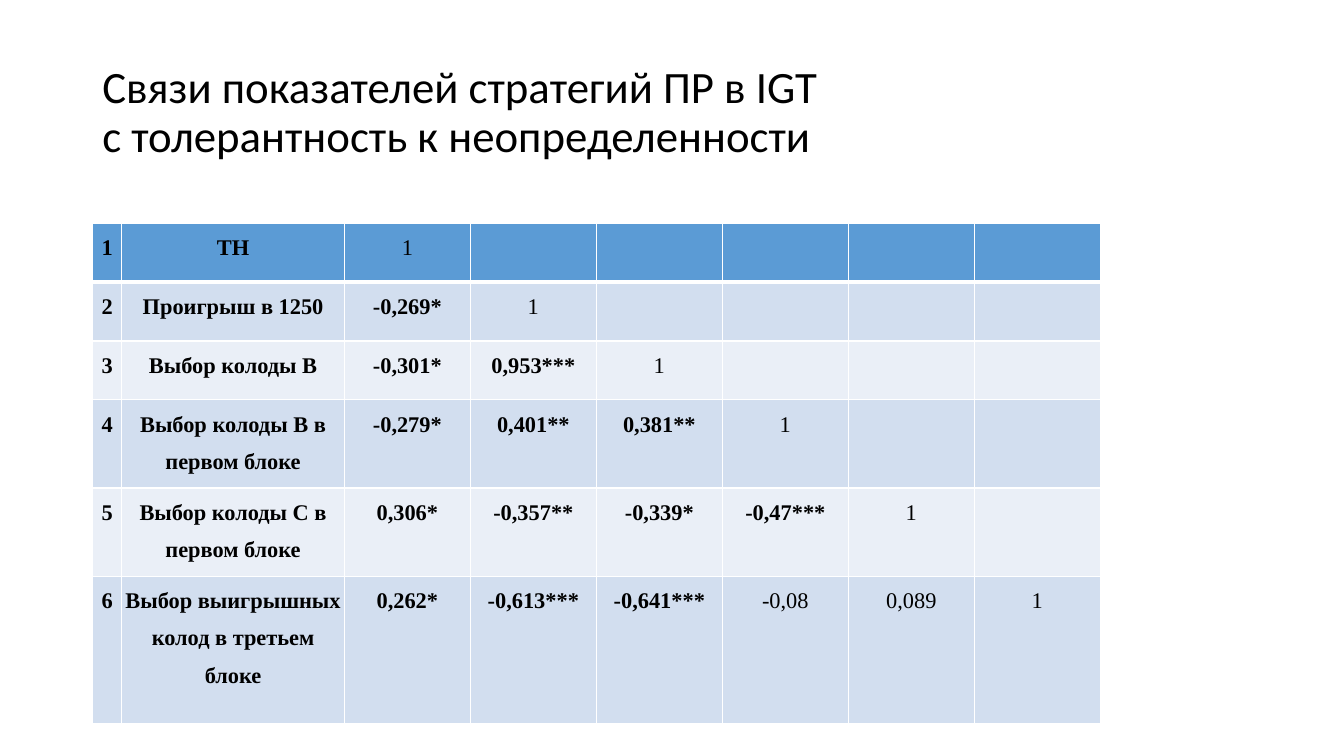
from lxml import etree
from pptx import Presentation, util as u
from pptx.dml.color import RGBColor
from pptx.enum import text
from pptx.oxml import ns

COLORS = {"ink": "000000", "line": "FFFFFF", "head": "5B9BD5",
          "odd": "D2DEEF", "even": "EAEFF7"}
GRID = 160, 90  # columns and rows over the whole slide

TITLE = "Связи показателей стратегий ПР в IGT\vc толерантность к неопределенности"
LABELS = ["ТН", "Проигрыш в 1250", "Выбор колоды B",
          "Выбор колоды В в первом блоке", "Выбор колоды С в первом блоке",
          "Выбор выигрышных колод в третьем блоке"]
VALUES = [
    [],
    ["-0,269*"],
    ["-0,301*", "0,953***"],
    ["-0,279*", "0,401**", "0,381**"],
    ["0,306*", "-0,357**", "-0,339*", "-0,47***"],
    ["0,262*", "-0,613***", "-0,641***", "-0,08", "0,089"],
]
WIDTHS = [3.5, 26.5] + [15] * 6
HEIGHTS = [7, 7, 7, 10.5, 10.5, 17.5]


class Page:
    def __init__(self, deck):
        self.unit = deck.slide_width / GRID[0], deck.slide_height / GRID[1]
        self.slide = deck.slides.add_slide(deck.slide_layouts[6])

    def x(self, cols):
        return u.Emu(round(cols * self.unit[0]))

    def y(self, rows):
        return u.Emu(round(rows * self.unit[1]))

    def box(self, left, top, width, height):
        return self.x(left), self.y(top), self.x(width), self.y(height)

    def style(self, par, face, size, bold=False):
        font = par.font
        font.name, font.size, font.bold = face, u.Pt(size), bold
        font.color.rgb = RGBColor.from_string(COLORS["ink"])

    def title(self, words, *area):
        frame = self.slide.shapes.add_textbox(*self.box(*area)).text_frame
        frame.word_wrap = True
        frame.vertical_anchor = text.MSO_ANCHOR.MIDDLE
        par = frame.paragraphs[0]
        par.text = words
        par.line_spacing = 0.9
        self.style(par, "Calibri", 32)

    def edge(self, cell, side, width):
        props = cell._tc.get_or_add_tcPr()
        line = etree.SubElement(props, ns.qn("a:ln" + side), w=str(u.Pt(width)))
        fill = etree.SubElement(line, ns.qn("a:solidFill"))
        etree.SubElement(fill, ns.qn("a:srgbClr"), val=COLORS["line"])

    def cell(self, cell, words, bold, fill, base):
        for side in "LRTB":
            self.edge(cell, side, base if side == "B" else 1)
        cell.fill.solid()
        cell.fill.fore_color.rgb = RGBColor.from_string(COLORS[fill])
        if words:
            cell.margin_left = cell.margin_right = 0
            cell.margin_top = cell.margin_bottom = 0
            par = cell.text_frame.paragraphs[0]
            par.text = words
            par.alignment = text.PP_ALIGN.CENTER
            par.line_spacing = 1.5
            self.style(par, "Times New Roman", 16, bold)

    def table(self, left, top, widths, heights, rows):
        area = self.box(left, top, sum(widths), sum(heights))
        table = self.slide.shapes.add_table(len(heights), len(widths), *area).table
        for col, width in zip(table.columns, widths):
            col.width = self.x(width)
        for r, (row, height) in enumerate(zip(rows, heights)):
            table.rows[r].height = self.y(height)
            fill = "head" if r == 0 else "odd" if r % 2 else "even"
            for c in range(len(widths)):
                words = row[c] if c < len(row) else ""
                # Labels and significant values are bold
                bold = c < 2 or "*" in words
                self.cell(table.cell(r, c), words, bold, fill, 1 if r else 3)


def main():
    deck = Presentation()
    deck.slide_width, deck.slide_height = u.Inches(13.33), u.Inches(7.5)
    page = Page(deck)

    # Heading
    page.title(TITLE, 11, 4.8, 138, 17.4)

    # Correlation matrix with ones on the diagonal
    rows = [[str(n), label, *values, "1"]
            for n, (label, values) in enumerate(zip(LABELS, VALUES), 1)]
    page.table(11, 26.6, WIDTHS, HEIGHTS, rows)

    deck.save("out.pptx")


if __name__ == "__main__":
    main()
